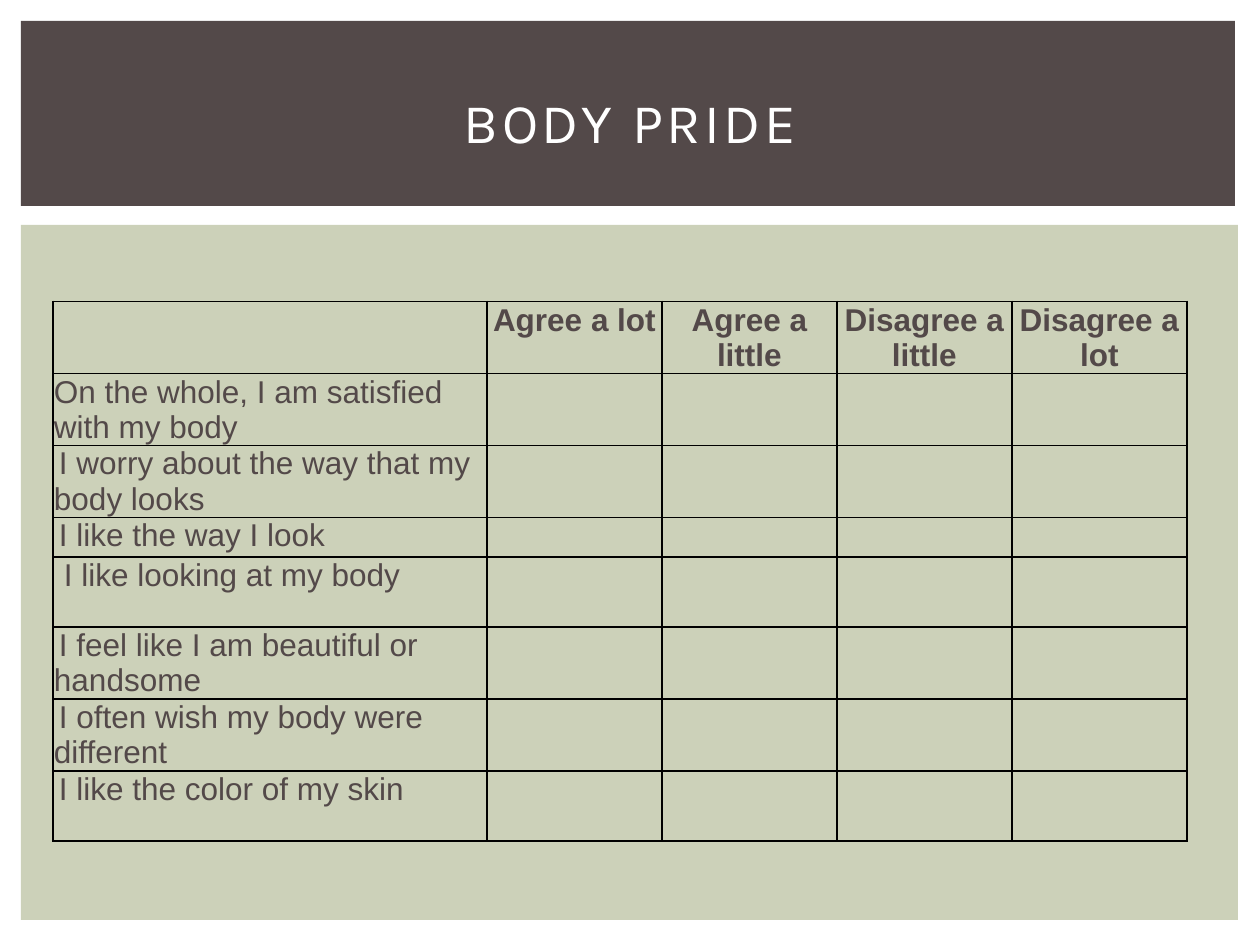
from dataclasses import dataclass

from lxml.etree import SubElement
from pptx import Presentation
from pptx.dml.color import RGBColor
from pptx.enum.shapes import MSO_SHAPE
from pptx.enum.text import MSO_ANCHOR, PP_ALIGN
from pptx.oxml.ns import qn
from pptx.util import Pt

PX = 7257  # EMU in one pixel, at 126 pixels to the inch


@dataclass(frozen=True)
class Theme:
    dark: RGBColor = RGBColor(0x53, 0x49, 0x49)
    panel: RGBColor = RGBColor(0xCC, 0xD1, 0xB9)
    white: RGBColor = RGBColor(0xFF, 0xFF, 0xFF)
    border: str = "000000"
    title_font: str = "Karla"
    body_font: str = "Arial"
    title_size: int = 32
    body_size: int = 18
    title_spacing: int = 200  # hundredths of a point


THEME = Theme()

ANSWERS = ["Agree a lot", "Agree a little", "Disagree a little", "Disagree a lot"]
# Statement, first-line indent, row height
STATEMENTS = [
    ("On the whole, I am satisfied with my body", 0, 72),
    ("I worry about the way that my body looks", 5, 72),
    ("I like the way I look", 5, 37),
    ("I like looking at my body", 10, 70),
    ("I feel like I am beautiful or handsome", 5, 72),
    ("I often wish my body were different", 5, 72),
    ("I like the color of my skin", 5, 70),
]
SPACER_HEIGHT, HEADER_HEIGHT = 39, 72
STATEMENT_WIDTH = 434


def scaled(box):
    return [length * PX for length in box]


def style_span(span, font_name, size, color, bold=False):
    span.font.name = font_name
    span.font.size = Pt(size)
    span.font.color.rgb = color
    span.font.bold = bold


def add_panel(page, box, color):
    panel = page.shapes.add_shape(MSO_SHAPE.RECTANGLE, *scaled(box))
    panel.shadow.inherit = False
    panel.fill.solid()
    panel.fill.fore_color.rgb = color
    panel.line.fill.background()


def add_header(page, box, text):
    """Draw the dark band and set the title placeholder inside it."""
    left, top, width, height = box
    add_panel(page, box, THEME.dark)
    title = page.shapes.title
    title.left, title.top, title.width, title.height = scaled(
        (left + 32, top + 28, width - 60, height - 40))
    # Bring the title in front of the band
    page.shapes._spTree.append(title._element)
    title.text_frame.text = text
    title.text_frame.vertical_anchor = MSO_ANCHOR.MIDDLE
    para = title.text_frame.paragraphs[0]
    para.alignment = PP_ALIGN.CENTER
    span = para.runs[0]
    style_span(span, THEME.title_font, THEME.title_size, THEME.white)
    span.font._element.set("spc", str(THEME.title_spacing))


def set_borders(cell, visible_sides):
    properties = cell._tc.get_or_add_tcPr()
    for index, side in enumerate("LRTB"):
        line = properties.makeelement(qn(f"a:ln{side}"), {"w": str(Pt(1))})
        properties.insert(index, line)
        if side in visible_sides:
            fill = SubElement(line, qn("a:solidFill"))
            SubElement(fill, qn("a:srgbClr"), val=THEME.border)
        else:
            SubElement(line, qn("a:noFill"))


def write_cell(cell, text, alignment, bold=False, indent=0):
    cell.text_frame.text = text
    para = cell.text_frame.paragraphs[0]
    para.alignment = alignment
    para._p.get_or_add_pPr().set("indent", str(indent * PX))
    style_span(para.runs[0], THEME.body_font, THEME.body_size, THEME.dark, bold)


def add_survey(page, box):
    """Place the table: an open spacer row, the answers, then the statements."""
    heights = [SPACER_HEIGHT, HEADER_HEIGHT] + [row[2] for row in STATEMENTS]
    frame = page.shapes.add_table(len(heights), len(ANSWERS) + 1, *scaled(box))
    table = frame.table
    table.first_row = table.horz_banding = False

    answer_width = (box[2] - STATEMENT_WIDTH) // len(ANSWERS)
    for index, column in enumerate(table.columns):
        column.width = (answer_width if index else STATEMENT_WIDTH) * PX
    for index, (row, height) in enumerate(zip(table.rows, heights)):
        row.height = height * PX
        for cell in row.cells:
            cell.margin_left = cell.margin_right = cell.margin_top = PX
            cell.margin_bottom = 0
            cell.fill.background()
            set_borders(cell, "LRTB" if index else "B")

    for column, answer in enumerate(ANSWERS, start=1):
        write_cell(table.cell(1, column), answer, PP_ALIGN.CENTER, bold=True)
    for row, (statement, indent, _) in enumerate(STATEMENTS, start=2):
        write_cell(table.cell(row, 0), statement, PP_ALIGN.LEFT, indent=indent)


def main():
    deck = Presentation()
    deck.slide_width, deck.slide_height = scaled((1260, 945))
    page = deck.slides.add_slide(deck.slide_layouts[5])
    add_panel(page, (21, 225, 1217, 695), THEME.panel)
    add_header(page, (21, 21, 1214, 185), "BODY PRIDE")
    add_survey(page, (53, 262, 1134, 576))
    deck.save("out.pptx")


if __name__ == "__main__":
    main()
